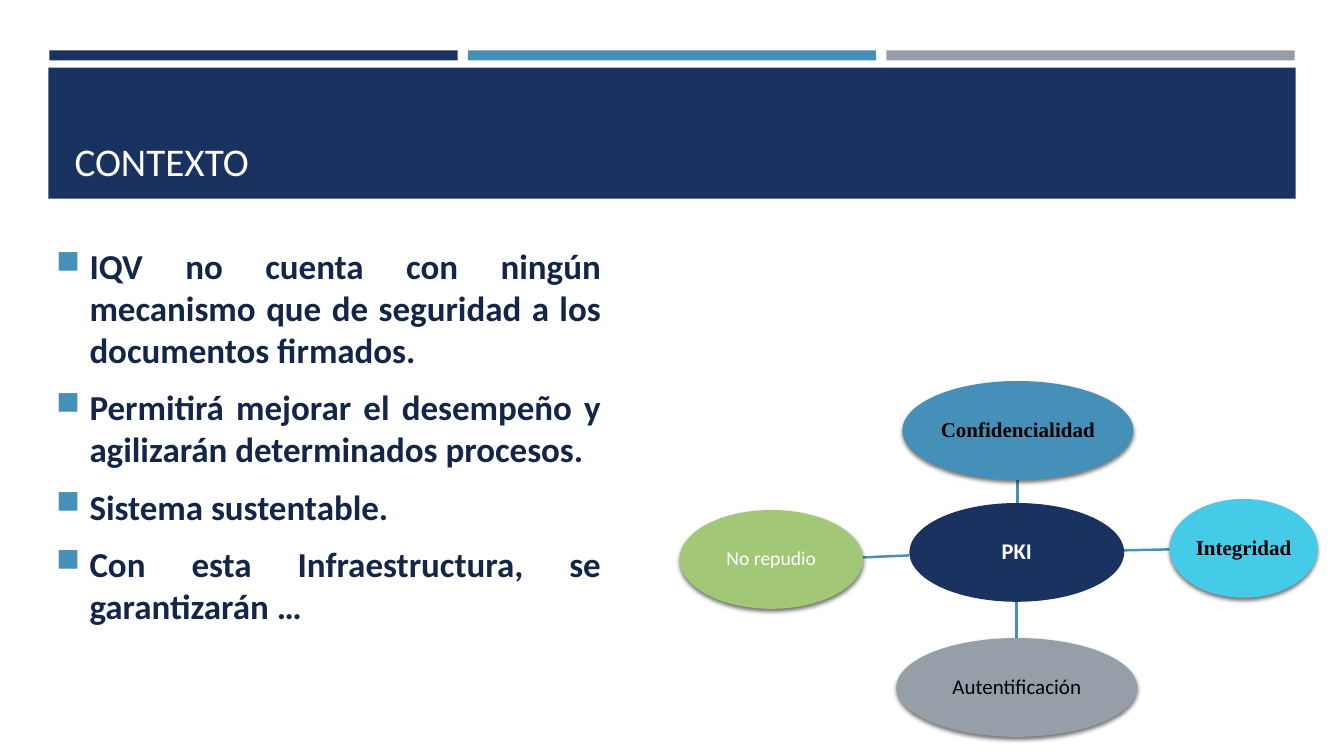
import lxml.etree
import pptx
import pptx.dml.color
import pptx.enum.shapes
import pptx.enum.text
import pptx.oxml
import pptx.oxml.ns
import pptx.util

Inches = pptx.util.Inches
Pt = pptx.util.Pt
Shape = pptx.enum.shapes.MSO_SHAPE
Anchor = pptx.enum.text.MSO_ANCHOR
Align = pptx.enum.text.PP_ALIGN
NAVY, BLUE, GRAY = "1A3260", "4590B8", "969FA7"
NAMESPACE = 'xmlns:a="http://schemas.openxmlformats.org/drawingml/2006/main"'


def color(value):
    return pptx.dml.color.RGBColor.from_string(value)


def add_filled(kind, left, top, width, height, fill):
    shape = slide.shapes.add_shape(kind, Inches(left), Inches(top), Inches(width), Inches(height))
    shape.shadow.inherit = False
    shape.fill.solid()
    shape.fill.fore_color.rgb = color(fill)
    shape.line.fill.background()
    return shape


deck = pptx.Presentation()
deck.slide_width = Inches(13.33)
deck.slide_height = Inches(7.5)
slide = deck.slides.add_slide(deck.slide_layouts[6])

for column, fill in enumerate([NAVY, BLUE, GRAY]):
    add_filled(Shape.RECTANGLE, 0.49 + 4.15 * column, 0.5, 4.05, 0.1, fill)

banner = add_filled(Shape.RECTANGLE, 0.48, 0.67, 12.37, 1.3, NAVY)
frame = banner.text_frame
frame.text = "CONTEXTO"
frame.vertical_anchor = Anchor.BOTTOM
frame.margin_left = Inches(0.26)
frame.margin_bottom = Inches(0.14)
para = frame.paragraphs[0]
para.alignment = Align.LEFT
para.font.size = Pt(28)
para.font.name = "Calibri"
para.font.color.rgb = color("FFFFFF")

points = [
    "IQV no cuenta con ningún mecanismo que de seguridad a los documentos firmados.",
    "Permitirá mejorar el desempeño y agilizarán determinados procesos.",
    "Sistema sustentable.",
    "Con esta Infraestructura, se garantizarán …",
]
box = slide.shapes.add_textbox(Inches(0.46), Inches(1.65), Inches(5.6), Inches(5.34))
frame = box.text_frame
frame.word_wrap = True
frame.vertical_anchor = Anchor.MIDDLE
frame.text = "\n".join(points)
for para in frame.paragraphs:
    para.alignment = Align.JUSTIFY
    para.space_before = Pt(5)
    para.space_after = Pt(6)
    properties = para._p.get_or_add_pPr()
    properties.set("marL", str(Inches(0.33)))
    properties.set("indent", str(-Inches(0.33)))
    for bullet in (
        f'<a:buClr {NAMESPACE}><a:srgbClr val="{BLUE}"/></a:buClr>',
        f'<a:buSzPct {NAMESPACE} val="92000"/>',
        f'<a:buChar {NAMESPACE} char="■"/>',
    ):
        properties.append(pptx.oxml.parse_xml(bullet))
    font = para.runs[0].font
    font.size = Pt(25)
    font.name = "Calibri"
    font.bold = True
    font.color.rgb = color("142648")

links = [
    (10.09, 4.99, 10.09, 4.76),
    (11.14, 5.46, 11.6, 5.45),
    (10.08, 5.97, 10.08, 6.33),
    (9.02, 5.51, 8.56, 5.53),
]
for ends in links:
    link = slide.shapes.add_connector(
        pptx.enum.shapes.MSO_CONNECTOR.STRAIGHT, *[Inches(value) for value in ends])
    link.line.color.rgb = color(BLUE)
    link.line.width = Pt(1.75)
    lxml.etree.SubElement(link._element.spPr, pptx.oxml.ns.qn("a:effectLst"))

nodes = [
    ("PKI", 9.02, 4.99, 2.13, NAVY, "FFFFFF", "Calibri", 16, True),
    ("Confidencialidad", 8.95, 3.78, 2.29, BLUE, "000000", "Times New Roman", 15, True),
    ("Integridad", 11.6, 4.95, 1.47, "45CBE8", "000000", "Times New Roman", 15, True),
    ("Autentificación", 8.89, 6.33, 2.39, GRAY, "000000", "Calibri", 15, False),
    ("No repudio", 6.74, 5.06, 1.82, "A2C777", "FFFFFF", "Calibri", 14, False),
]
for label, left, top, width, fill, ink, typeface, size, bold in nodes:
    node = add_filled(Shape.OVAL, left, top, width, 0.98, fill)
    if label != "PKI":
        effects = node._element.spPr.find(pptx.oxml.ns.qn("a:effectLst"))
        effects.append(pptx.oxml.parse_xml(
            f'<a:outerShdw {NAMESPACE} blurRad="{Pt(3)}" dist="{Pt(2)}" dir="5400000" rotWithShape="0">'
            '<a:srgbClr val="000000"><a:alpha val="55000"/></a:srgbClr></a:outerShdw>'))
    frame = node.text_frame
    frame.text = label
    frame.word_wrap = True
    frame.vertical_anchor = Anchor.MIDDLE
    frame.margin_left = frame.margin_right = Inches(0.01)
    frame.margin_top = frame.margin_bottom = Inches(0.01)
    para = frame.paragraphs[0]
    para.alignment = Align.CENTER
    para.line_spacing = 0.9
    font = para.runs[0].font
    font.size = Pt(size)
    font.name = typeface
    font.bold = bold
    font.color.rgb = color(ink)

deck.save("out.pptx")
